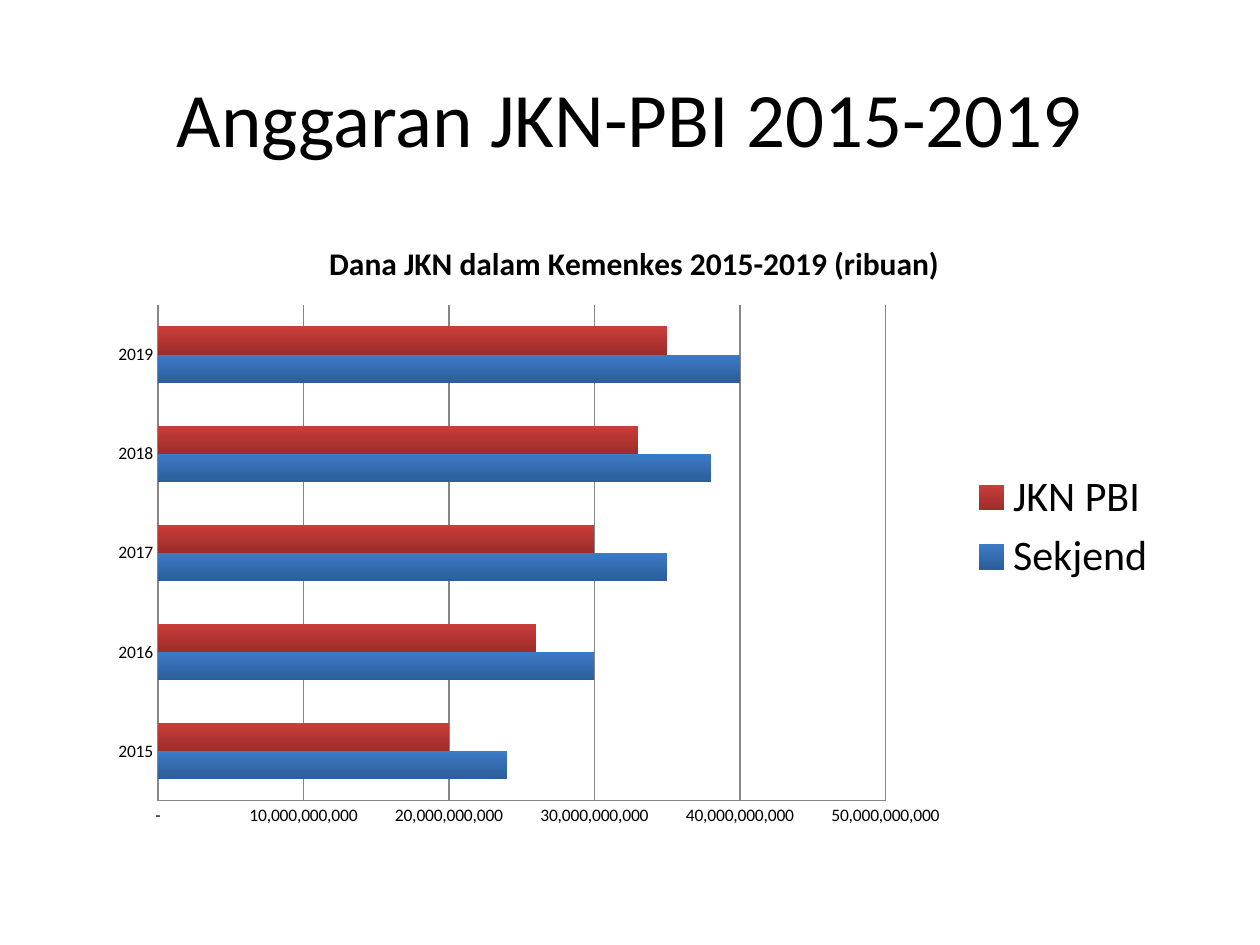
from pptx import Presentation
from pptx.chart.data import CategoryChartData as Data
from pptx.dml.color import RGBColor as RGB
from pptx.enum.chart import XL_CHART_TYPE as Kind, XL_LEGEND_POSITION as Side, XL_TICK_MARK as Tick
from pptx.enum.text import MSO_ANCHOR as Anchor, PP_ALIGN as Align
from pptx.util import Pt

HUES = {
    "text": "000000",
    "grid": "868686",
    "Sekjend": ("3C7BC7", "2C5D98"),
    "JKN PBI": ("CB3D3A", "9B2D2A"),
}
FACE = "Calibri"
YEARS = ["2015", "2016", "2017", "2018", "2019"]
BILLION = 10 ** 9
FUNDS = {
    "Sekjend": [24, 30, 35, 38, 40],
    "JKN PBI": [20, 26, 30, 33, 35],
}
FORMAT = '_-* #,##0_-;\\-* #,##0_-;_-* "-"_-;_-@_-'


def style(font, size, bold=False):
    for name, value in {"name": FACE, "size": Pt(size), "bold": bold}.items():
        setattr(font, name, value)
    font.color.rgb = RGB.from_string(HUES["text"])


def add_title(slide, box):
    title = slide.shapes.title
    for name, value in zip(("left", "top", "width", "height"), box):
        setattr(title, name, Pt(value))
    frame = title.text_frame
    frame.text = "Anggaran JKN-PBI 2015-2019"
    frame.vertical_anchor = Anchor.MIDDLE
    line = frame.paragraphs[0]
    line.alignment = Align.CENTER
    style(line.runs[0].font, 44)


def paint(series):
    fill = series.format.fill
    fill.gradient()
    fill.gradient_angle = 270
    for stop, hue, place in zip(fill.gradient_stops, HUES[series.name], (0, 1)):
        stop.color.rgb = RGB.from_string(hue)
        stop.position = place
    series.invert_if_negative = False


def add_funds(slide, box):
    data = Data(number_format=FORMAT)
    data.categories = YEARS
    for name, sums in FUNDS.items():
        data.add_series(name, [n * BILLION for n in sums])
    chart = slide.shapes.add_chart(Kind.BAR_CLUSTERED, *map(Pt, box), data).chart
    style(chart.font, 10)

    chart.has_title = True
    head = chart.chart_title
    head.include_in_layout = False
    head.text_frame.text = "Dana JKN dalam Kemenkes 2015-2019 (ribuan)"
    style(head.text_frame.paragraphs[0].runs[0].font, 18, True)

    chart.has_legend = True
    key = chart.legend
    key.position = Side.RIGHT
    key.include_in_layout = False
    style(key.font, 24)

    plot = chart.plots[0]
    for name, value in {"gap_width": 150, "overlap": 0, "vary_by_categories": False}.items():
        setattr(plot, name, value)
    for series in plot.series:
        paint(series)

    sums = chart.value_axis
    for name, value in {"minimum_scale": 0, "maximum_scale": 50 * BILLION,
                        "major_unit": 10 * BILLION, "has_major_gridlines": True}.items():
        setattr(sums, name, value)
    sums.tick_labels.number_format = FORMAT
    sums.tick_labels.number_format_is_linked = False
    for axis in (chart.category_axis, sums):
        axis.major_tick_mark = axis.minor_tick_mark = Tick.NONE
        style(axis.tick_labels.font, 10)
    for part in (chart.category_axis, sums, sums.major_gridlines):
        part.format.line.color.rgb = RGB.from_string(HUES["grid"])
        part.format.line.width = Pt(0.75)


def main():
    deck = Presentation()
    deck.slide_width, deck.slide_height = Pt(720), Pt(540)
    slide = deck.slides.add_slide(deck.slide_layouts[5])
    add_title(slide, (36, 21.6, 648, 90))
    add_funds(slide, (55.4, 123.8, 614.2, 355))
    deck.save("out.pptx")


if __name__ == "__main__":
    main()
